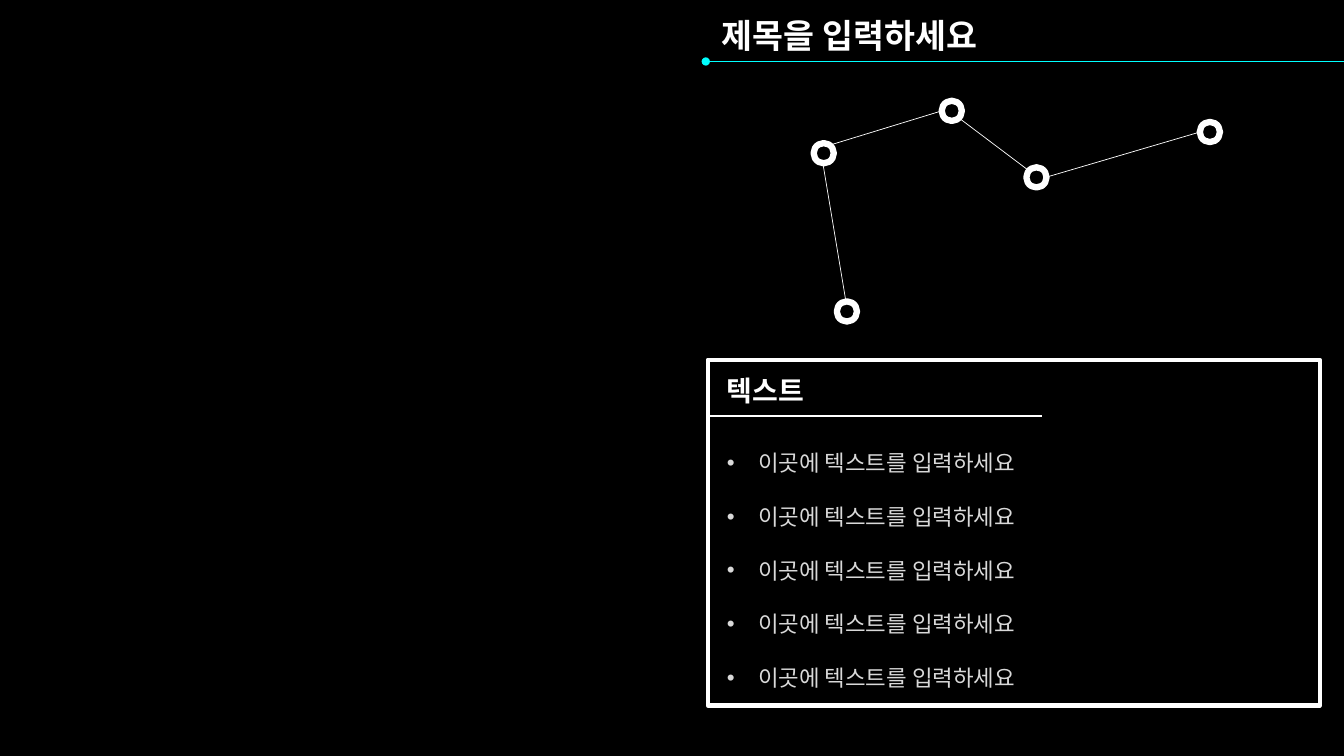
from pptx import Presentation
from pptx.dml.color import RGBColor
from pptx.enum.shapes import MSO_CONNECTOR, MSO_SHAPE
from pptx.enum.text import MSO_ANCHOR, MSO_AUTO_SIZE, PP_ALIGN
from pptx.oxml.ns import qn
from pptx.util import Inches, Pt
from lxml.etree import SubElement

FONT = "Noto Sans CJK KR"
COLORS = {name: RGBColor.from_string(code) for name, code in {
    "black": "000000", "white": "FFFFFF", "gray": "D9D9D9", "cyan": "00FFFF",
}.items()}


def write(shape, box, text, size, color, bold=False, wrap=False):
    shape.left, shape.top, shape.width, shape.height = map(Inches, box)
    frame = shape.text_frame
    frame.text = text
    frame.word_wrap = wrap
    frame.auto_size = MSO_AUTO_SIZE.SHAPE_TO_FIT_TEXT
    frame.vertical_anchor = MSO_ANCHOR.TOP
    for para in frame.paragraphs:
        para.alignment = PP_ALIGN.LEFT
        para.space_before = Pt(0)
        for run in para.runs:
            font = run.font
            font.name, font.size, font.bold = FONT, Pt(size), bold
            font.color.rgb = COLORS[color]
            SubElement(font._element, qn("a:ea"), typeface=FONT)
    return frame


def draw_line(start, end, width, color="white"):
    line = slide.shapes.add_connector(
        MSO_CONNECTOR.STRAIGHT, *map(Inches, start + end))
    line.line.width = Pt(width)
    line.line.color.rgb = COLORS[color]
    SubElement(line._element.spPr, qn("a:effectLst"))
    return line


deck = Presentation()
deck.slide_width, deck.slide_height = Inches(13.33), Inches(7.5)
slide = deck.slides.add_slide(deck.slide_layouts[1])
slide.background.fill.solid()
slide.background.fill.fore_color.rgb = COLORS["black"]
title, body = slide.placeholders

# Title with its rule and dot
write(title, (7.06, 0.1, 3.01, 0.5), "제목을 입력하세요", 24, "white", bold=True)
rule = draw_line((13.33, 0.61), (7, 0.61), 0.5, "cyan")
SubElement(rule.line._get_or_add_ln(), qn("a:tailEnd"), type="oval")

# Text panel
panel = slide.shapes.add_shape(
    MSO_SHAPE.RECTANGLE, *map(Inches, (7.02, 3.57, 6.07, 3.43)))
panel.shadow.inherit = False
panel.fill.background()
panel.line.color.rgb = COLORS["white"]
panel.line.width = Pt(3)
draw_line((7.02, 4.13), (10.33, 4.13), 1.25)
head = slide.shapes.add_textbox(0, 0, 0, 0)
write(head, (7.11, 3.66, 1.04, 0.44), "텍스트", 20, "white", bold=True)

# Bullet list
items = "\n".join(["이곳에 텍스트를 입력하세요"] * 5)
frame = write(body, (7.11, 4.14, 5.67, 2.86), items, 16, "gray", wrap=True)
for para in frame.paragraphs:
    para.line_spacing = 2.0
    props = para._p.get_or_add_pPr()
    props.set("marL", str(Inches(0.31)))
    props.set("indent", str(Inches(-0.31)))
    SubElement(props, qn("a:buFont"), typeface="Arial")
    SubElement(props, qn("a:buChar"), char="•")

# Links between the stars
for start, end in [
    ((8.39, 2.99), (8.16, 1.61)),
    ((8.23, 1.44), (9.34, 1.1)),
    ((9.51, 1.17), (10.2, 1.69)),
    ((10.37, 1.76), (11.9, 1.31)),
]:
    draw_line(start, end, 0.5)

# Stars
for left, top in [(8.3, 2.99), (8.07, 1.42), (9.34, 1), (10.18, 1.66), (11.9, 1.21)]:
    star = slide.shapes.add_shape(
        MSO_SHAPE.OVAL, *map(Inches, (left, top, 0.2, 0.2)))
    star.shadow.inherit = False
    if left == 8.3:
        star.fill.solid()
        star.fill.fore_color.rgb = COLORS["black"]
    else:
        star.fill.background()
    star.line.color.rgb = COLORS["white"]
    star.line.width = Pt(4.5)

deck.save("out.pptx")
